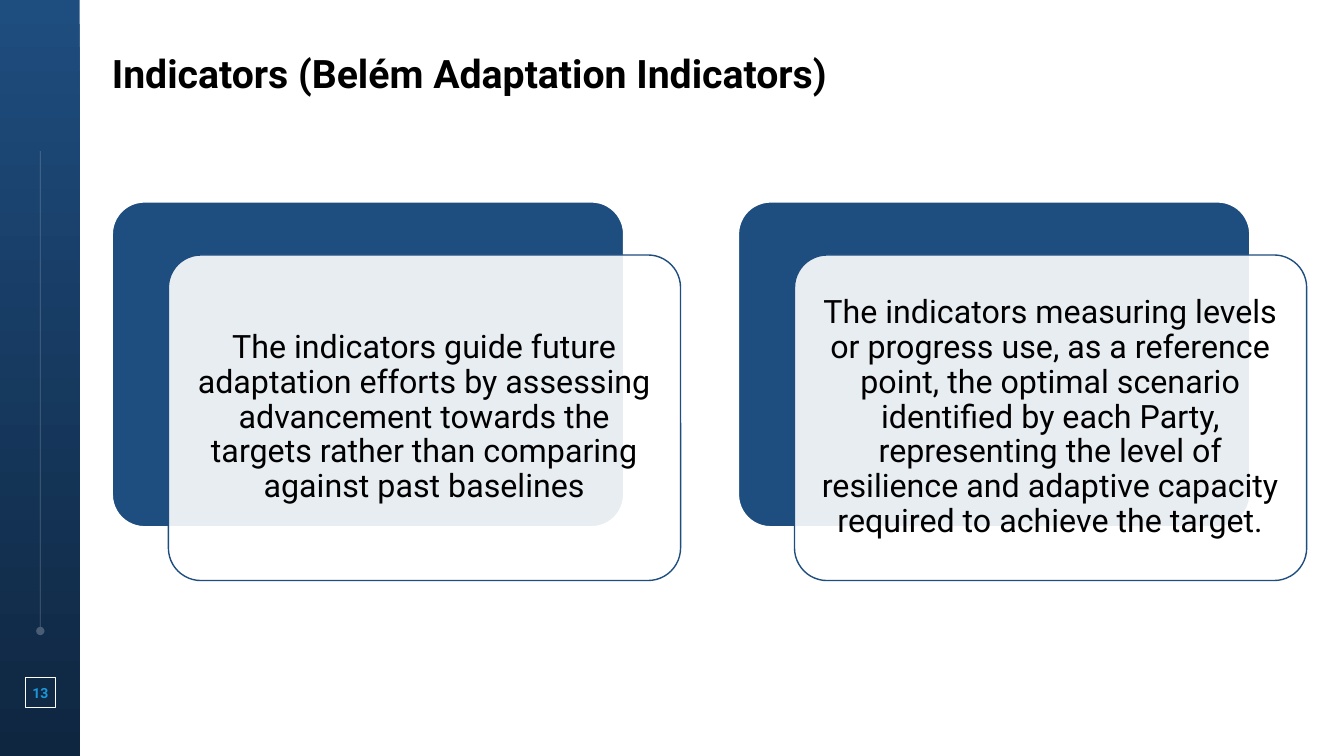
"""Build the Belém Adaptation Indicators slide with two layered cards."""
from dataclasses import dataclass

from lxml import etree
from pptx import Presentation
from pptx import util as u
from pptx.dml.color import RGBColor
from pptx.enum import shapes, text
from pptx.oxml import ns


@dataclass(frozen=True)
class Theme:
    face: str = "Roboto"
    navy: RGBColor = RGBColor(0x1E, 0x4D, 0x7F)
    midnight: RGBColor = RGBColor(0x0F, 0x26, 0x40)
    sky: RGBColor = RGBColor(0x1C, 0x97, 0xDA)
    white: RGBColor = RGBColor(0xFF, 0xFF, 0xFF)
    black: RGBColor = RGBColor(0, 0, 0)
    title_size: u.Pt = u.Pt(28)
    card_size: u.Pt = u.Pt(23)
    number_size: u.Pt = u.Pt(10)


theme = Theme()


def write(shape, words, size, color, inset=0, bold=False, align=text.PP_ALIGN.CENTER, spacing=1.0):
    """Put one formatted, vertically centred paragraph into a shape."""
    frame = shape.text_frame
    frame_format = {"word_wrap": True, "vertical_anchor": text.MSO_ANCHOR.MIDDLE}
    for side in ("left", "top", "right", "bottom"):
        frame_format[f"margin_{side}"] = u.Inches(inset)
    frame.text = words
    paragraph = frame.paragraphs[0]
    paragraph.font.color.rgb = color
    for target, values in (
        (frame, frame_format),
        (paragraph, {"alignment": align, "line_spacing": spacing}),
        (paragraph.font, {"name": theme.face, "size": size, "bold": bold}),
    ):
        for name, value in values.items():
            setattr(target, name, value)


def set_opacity(shape, color_place, percent):
    """Make the colour found at a place in the shape partly transparent."""
    color = shape.element.spPr.xpath(f"{color_place}/a:srgbClr")[0]
    etree.SubElement(color, ns.qn("a:alpha"), val=str(percent * 1000))


prs = Presentation()
prs.slide_width, prs.slide_height = u.Inches(13.33), u.Inches(7.5)
slide = prs.slides.add_slide(prs.slide_layouts[6])

sidebar = slide.shapes.add_shape(
    shapes.MSO_SHAPE.RECTANGLE, 0, 0, u.Inches(0.79), prs.slide_height)
sidebar.shadow.inherit = False
sidebar.line.fill.background()
sidebar.fill.gradient()
sidebar.fill.gradient_angle = 270
for stop, color, position in zip(sidebar.fill.gradient_stops, (theme.navy, theme.midnight), (0, 1)):
    stop.color.rgb = color
    stop.position = position

rail = slide.shapes.add_connector(
    shapes.MSO_CONNECTOR.STRAIGHT, u.Inches(0.4), u.Inches(6.26), u.Inches(0.4), u.Inches(1.5))
rail.line.color.rgb = theme.white
rail.line.width = u.Pt(0.5)
set_opacity(rail, "a:ln/a:solidFill", 24)
etree.SubElement(rail.element.spPr.find(ns.qn("a:ln")), ns.qn("a:headEnd"), type="oval")
etree.SubElement(rail.element.spPr, ns.qn("a:effectLst"))

page_number = slide.shapes.add_shape(
    shapes.MSO_SHAPE.RECTANGLE, u.Inches(0.25), u.Inches(6.72), u.Inches(0.3), u.Inches(0.3))
page_number.shadow.inherit = False
page_number.fill.background()
page_number.line.color.rgb = theme.white
page_number.line.width = u.Pt(0.5)
write(page_number, "13", theme.number_size, theme.sky, bold=True)

title = slide.shapes.add_textbox(u.Inches(1.11), u.Inches(0.49), u.Inches(11.86), u.Inches(0.47))
write(title, "Indicators (Belém Adaptation Indicators)", theme.title_size, theme.black,
      bold=True, align=text.PP_ALIGN.LEFT)

statements = (
    "The indicators guide future adaptation efforts by assessing advancement towards the "
    "targets rather than comparing against past baselines",
    "The indicators measuring levels or progress use, as a reference point, the optimal "
    "scenario identified by each Party, representing the level of resilience and adaptive "
    "capacity required to achieve the target.",
)
card_layers = (
    (0, 0, theme.navy, theme.white, 1.5),
    (0.56, 0.53, theme.white, theme.navy, 1),
)
for column, statement in enumerate(statements):
    for shift_x, shift_y, fill_color, line_color, line_width in card_layers:
        card = slide.shapes.add_shape(
            shapes.MSO_SHAPE.ROUNDED_RECTANGLE,
            u.Inches(1.11 + 6.21 * column + shift_x), u.Inches(2 + shift_y),
            u.Inches(5.08), u.Inches(3.23))
        card.adjustments[0] = 0.1
        card.shadow.inherit = False
        card.fill.solid()
        card.fill.fore_color.rgb = fill_color
        card.line.color.rgb = line_color
        card.line.width = u.Pt(line_width)
    set_opacity(card, "a:solidFill", 90)
    write(card, statement, theme.card_size, theme.black, inset=0.1, spacing=0.9)

prs.save("out.pptx")
